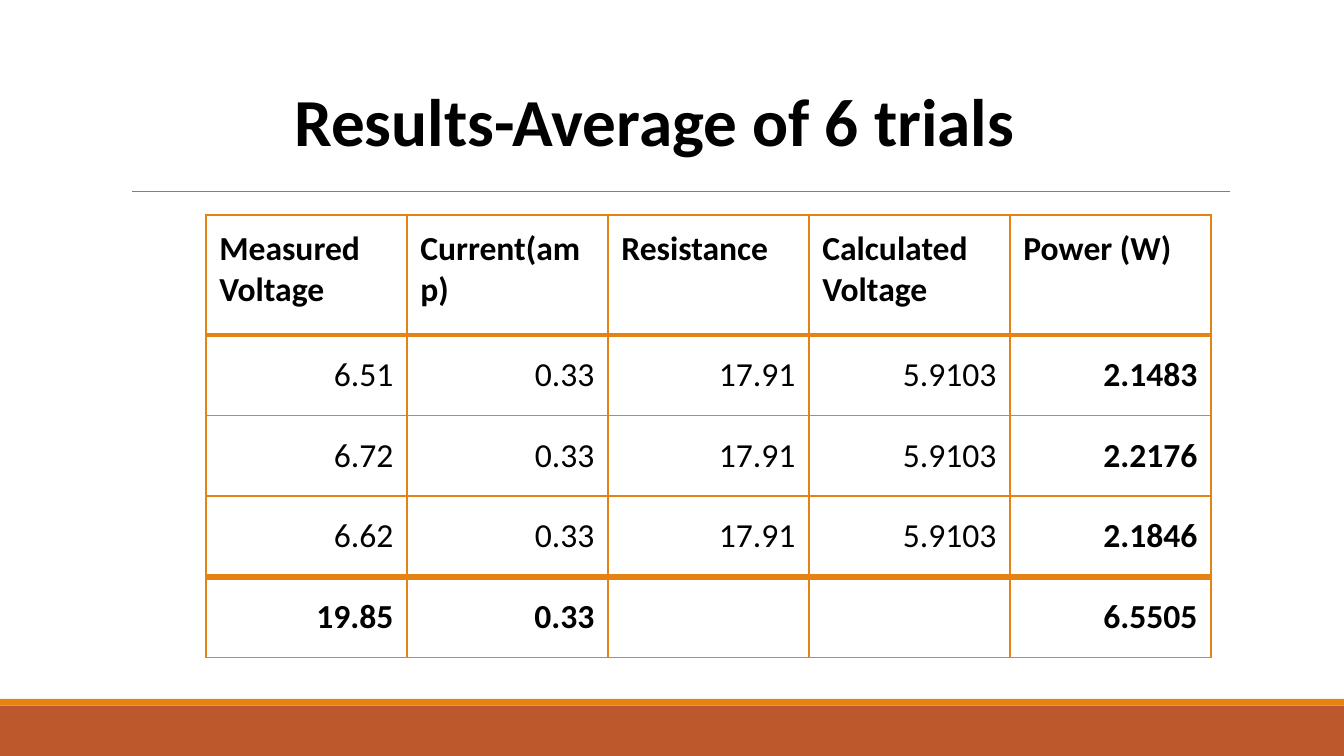
from typing import NamedTuple

from lxml.etree import SubElement
from pptx import Presentation
from pptx.dml.color import RGBColor
from pptx.enum.shapes import MSO_CONNECTOR, MSO_SHAPE
from pptx.enum.text import MSO_ANCHOR, MSO_AUTO_SIZE, PP_ALIGN
from pptx.oxml.ns import qn
from pptx.util import Pt

COLORS = {"text": "000000", "accent": "E48312", "footer": "BD582C", "rule": "808080"}
FONT = "Calibri"
INSET = Pt(7.2)


class Band(NamedTuple):
    top: float
    height: float
    color: str


class Row(NamedTuple):
    values: tuple[str, ...]
    height: float
    top_line: float
    bottom_line: float
    bold_columns: tuple[int, ...]
    is_header: bool = False


BANDS = (Band(378, 27, "footer"), Band(374.4, 3.6, "accent"))
ALL = (0, 1, 2, 3, 4)
ROWS = (
    Row(("Measured Voltage", "Current(amp)", "Resistance", "Calculated Voltage", "Power (W)"),
        64.1, 1, 2, ALL, True),
    Row(("6.51", "0.33", "17.91", "5.9103", "2.1483"), 43.2, 2, 1, (4,)),
    Row(("6.72", "0.33", "17.91", "5.9103", "2.2176"), 43.2, 1, 1, (4,)),
    Row(("6.62", "0.33", "17.91", "5.9103", "2.1846"), 43.2, 1, 4, (4,)),
    Row(("19.85", "0.33", "", "", "6.5505"), 43.2, 4, 1, ALL),
)


def color(name: str) -> RGBColor:
    return RGBColor.from_string(COLORS[name])


def style_text(paragraph, size: float, bold: bool) -> None:
    for font in [paragraph.font] + [span.font for span in paragraph.runs]:
        font.name = FONT
        font.size = Pt(size)
        font.bold = bold
        font.color.rgb = color("text")


def draw_band(page, band: Band) -> None:
    box = page.shapes.add_shape(MSO_SHAPE.RECTANGLE, 0, Pt(band.top), Pt(720), Pt(band.height))
    box.shadow.inherit = False
    box.fill.solid()
    box.fill.fore_color.rgb = color(band.color)
    box.line.fill.background()


def draw_rule(page) -> None:
    rule = page.shapes.add_connector(MSO_CONNECTOR.STRAIGHT, Pt(70.6), Pt(102.6), Pt(658.8), Pt(102.6))
    rule.line.color.rgb = color("rule")
    rule.line.width = Pt(0.5)
    SubElement(rule._element.spPr, qn("a:effectLst"))


def write_title(page, text: str) -> None:
    title = page.shapes.title
    title.left, title.top, title.width, title.height = Pt(114.5), Pt(35.3), Pt(472.3), Pt(43.2)
    frame = title.text_frame
    frame.text = text
    frame.word_wrap = True
    frame.auto_size = MSO_AUTO_SIZE.NONE
    frame.vertical_anchor = MSO_ANCHOR.TOP
    frame.margin_left = frame.margin_right = frame.margin_top = frame.margin_bottom = INSET
    paragraph = frame.paragraphs[0]
    paragraph.alignment = PP_ALIGN.CENTER
    style_text(paragraph, 36, True)


def set_borders(cell, top: float, bottom: float) -> None:
    properties = cell._tc.get_or_add_tcPr()
    for tag, width in (("a:lnL", 1), ("a:lnR", 1), ("a:lnT", top), ("a:lnB", bottom)):
        line = SubElement(properties, qn(tag), w=str(Pt(width)))
        fill = SubElement(line, qn("a:solidFill"))
        SubElement(fill, qn("a:srgbClr"), val=COLORS["accent"])


def fill_cell(cell, row: Row, column: int) -> None:
    cell.text_frame.text = row.values[column]
    cell.margin_left = cell.margin_right = cell.margin_top = cell.margin_bottom = INSET
    cell.vertical_anchor = MSO_ANCHOR.TOP
    set_borders(cell, row.top_line, row.bottom_line)
    cell.fill.background()
    paragraph = cell.text_frame.paragraphs[0]
    if not row.is_header:
        paragraph.alignment = PP_ALIGN.RIGHT
        paragraph.line_spacing = 1.15
    style_text(paragraph, 18, column in row.bold_columns)


def draw_results(page, rows: tuple[Row, ...]) -> None:
    height = sum(row.height for row in rows)
    columns = len(rows[0].values)
    table = page.shapes.add_table(
        len(rows), columns, Pt(110.3), Pt(115.3), Pt(538.5), Pt(height)).table
    table.horz_banding = False
    for column in table.columns:
        column.width = Pt(538.5 / columns)
    for index, row in enumerate(rows):
        table.rows[index].height = Pt(row.height)
        for column in range(columns):
            fill_cell(table.cell(index, column), row, column)


def main() -> None:
    deck = Presentation()
    deck.slide_width, deck.slide_height = Pt(720), Pt(405)
    page = deck.slides.add_slide(deck.slide_layouts[5])
    for band in BANDS:
        draw_band(page, band)
    draw_rule(page)
    write_title(page, "Results-Average of 6 trials")
    draw_results(page, ROWS)
    deck.save("out.pptx")


if __name__ == "__main__":
    main()
